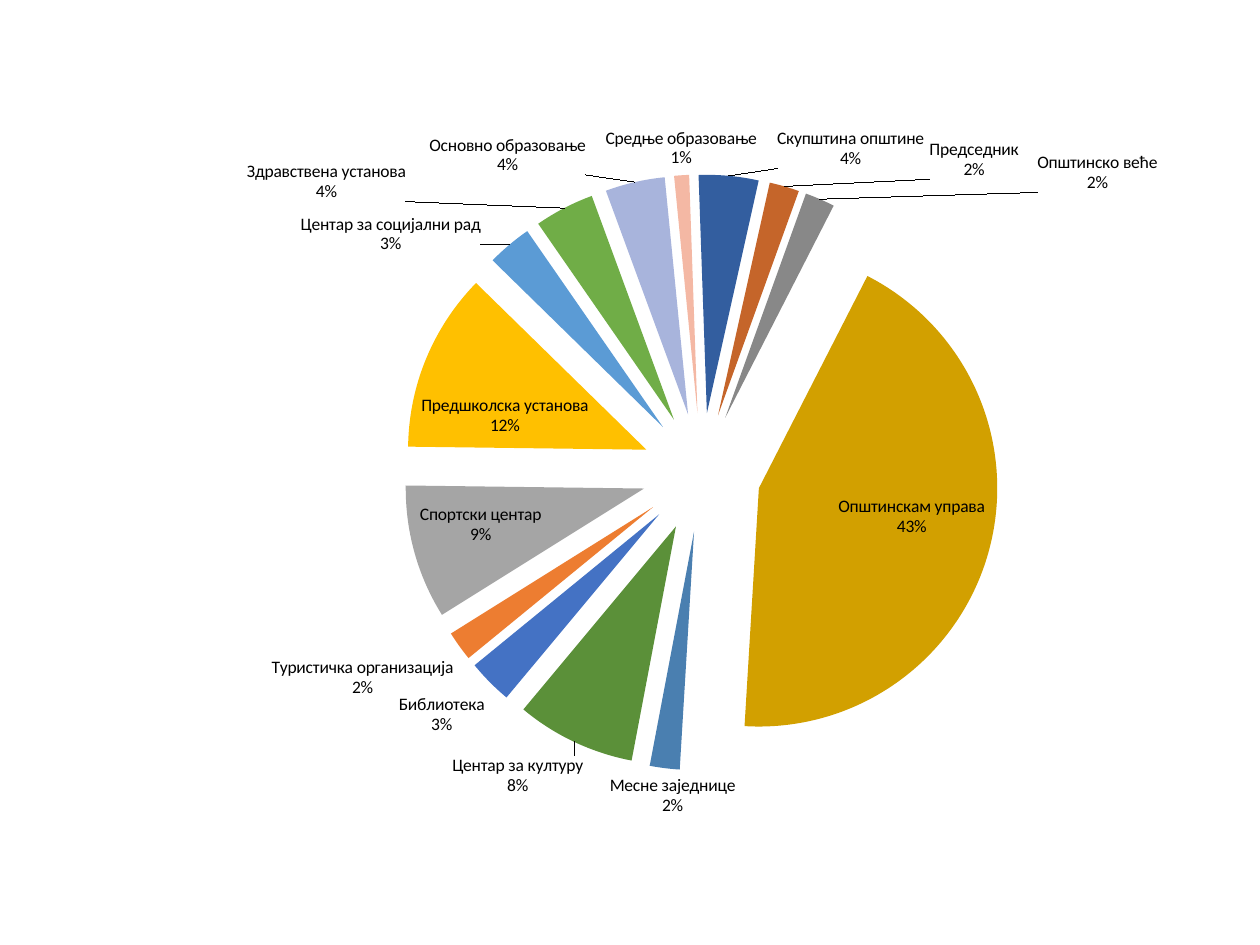
from lxml.etree import SubElement
from pptx import Presentation
from pptx.chart.data import CategoryChartData
from pptx.dml.color import RGBColor
from pptx.enum.chart import XL_CHART_TYPE, XL_LABEL_POSITION
from pptx.oxml import parse_xml
from pptx.oxml.ns import nsdecls, qn
from pptx.util import Pt

BUDGET = [
    ("Скупштина општине", 4, "335E9F"),
    ("Председник", 2, "C5652A"),
    ("Општинско веће", 2, "888888"),
    ("Општинскам управа", 43, "D2A000"),
    ("Месне заједнице", 2, "4A7FB0"),
    ("Центар за културу", 8, "5B9039"),
    ("Библиотека", 3, "4472C4"),
    ("Туристичка организација", 2, "ED7D31"),
    ("Спортски центар", 9, "A5A5A5"),
    ("Предшколска установа", 12, "FFC000"),
    ("Центар за социјални рад", 3, "5B9BD5"),
    ("Здравствена установа", 4, "70AD47"),
    ("Основно образовање", 4, "A8B4DC"),
    ("Средње образовање", 1, "F4B8A4"),
]
LABEL_SHIFTS = {
    "Скупштина општине": (0.04, 0),
    "Председник": (0.12, 0),
    "Општинско веће": (0.18, 0),
    "Месне заједнице": (0.06, 0),
    "Центар за културу": (0.01, 0.01),
    "Библиотека": (0, 0.01),
    "Туристичка организација": (0, 0.01),
    "Центар за социјални рад": (-0.02, 0.02),
    "Здравствена установа": (-0.13, 0),
    "Основно образовање": (-0.04, 0),
}
THEME = {"font": "Calibri", "size": Pt(10), "text": RGBColor(0, 0, 0)}
CHART_FRAME = (Pt(19.5), Pt(62.6), Pt(681), Pt(415))
PLOT_AREA = {"x": 0.31, "y": 0.08, "w": 0.5, "h": 0.84}
EXPLOSION = 25
FIRST_ANGLE = 358


def make_layout(values, inner=False):
    layout = parse_xml(f"<c:layout {nsdecls('c')}><c:manualLayout/></c:layout>")
    manual = layout[0]
    if inner:
        SubElement(manual, qn("c:layoutTarget"), val="inner")
        for axis in ("x", "y"):
            SubElement(manual, qn(f"c:{axis}Mode"), val="edge")
    for key, value in values.items():
        SubElement(manual, qn(f"c:{key}"), val=str(value))
    return layout


def show_name_and_percent(element):
    for tag, shown in (("showVal", "0"), ("showCatName", "1"), ("showPercent", "1")):
        element.find(qn(f"c:{tag}")).set("val", shown)
    separator = parse_xml(f"<c:separator {nsdecls('c')}>\n</c:separator>")
    element.find(qn("c:showBubbleSize")).addnext(separator)


def style_font(font):
    font.name = THEME["font"]
    font.size = THEME["size"]
    font.color.rgb = THEME["text"]


def add_budget_pie(page):
    data = CategoryChartData()
    data.categories = [name for name, share, color in BUDGET]
    data.add_series("Series 1", [share for name, share, color in BUDGET])
    chart = page.shapes.add_chart(XL_CHART_TYPE.PIE, *CHART_FRAME, data).chart
    chart.has_legend = False
    chart.has_title = False
    style_font(chart.font)

    plot = chart.plots[0]
    plot.vary_by_categories = True
    plot_area = chart._chartSpace.chart.plotArea
    for old in plot_area.findall(qn("c:layout")):
        plot_area.remove(old)
    plot_area.insert(0, make_layout(PLOT_AREA, inner=True))

    series = plot.series[0]
    pie = series._element.getparent()
    for old in pie.findall(qn("c:firstSliceAng")):
        pie.remove(old)
    SubElement(pie, qn("c:firstSliceAng"), val=str(FIRST_ANGLE))

    labels = series.data_labels
    style_font(labels.font)
    labels.position = XL_LABEL_POSITION.BEST_FIT
    show_name_and_percent(labels._element)

    for index, (name, share, color) in enumerate(BUDGET):
        point = series.points[index]
        point.format.fill.solid()
        point.format.fill.fore_color.rgb = RGBColor.from_string(color)
        if name in LABEL_SHIFTS:
            label = point.data_label
            style_font(label.font)
            label.position = XL_LABEL_POSITION.OUTSIDE_END
            element = labels._element.findall(qn("c:dLbl"))[-1]
            x, y = LABEL_SHIFTS[name]
            element.find(qn("c:idx")).addnext(make_layout({"x": x, "y": y}))
            show_name_and_percent(element)

    explosion = parse_xml(f'<c:explosion {nsdecls("c")} val="{EXPLOSION}"/>')
    for old in series._element.findall(qn("c:explosion")):
        series._element.remove(old)
    series._element.find(qn("c:dPt")).addprevious(explosion)


def main():
    deck = Presentation()
    deck.slide_width, deck.slide_height = Pt(720), Pt(540)
    page = deck.slides.add_slide(deck.slide_layouts[6])
    add_budget_pie(page)
    deck.save("out.pptx")


if __name__ == "__main__":
    main()
